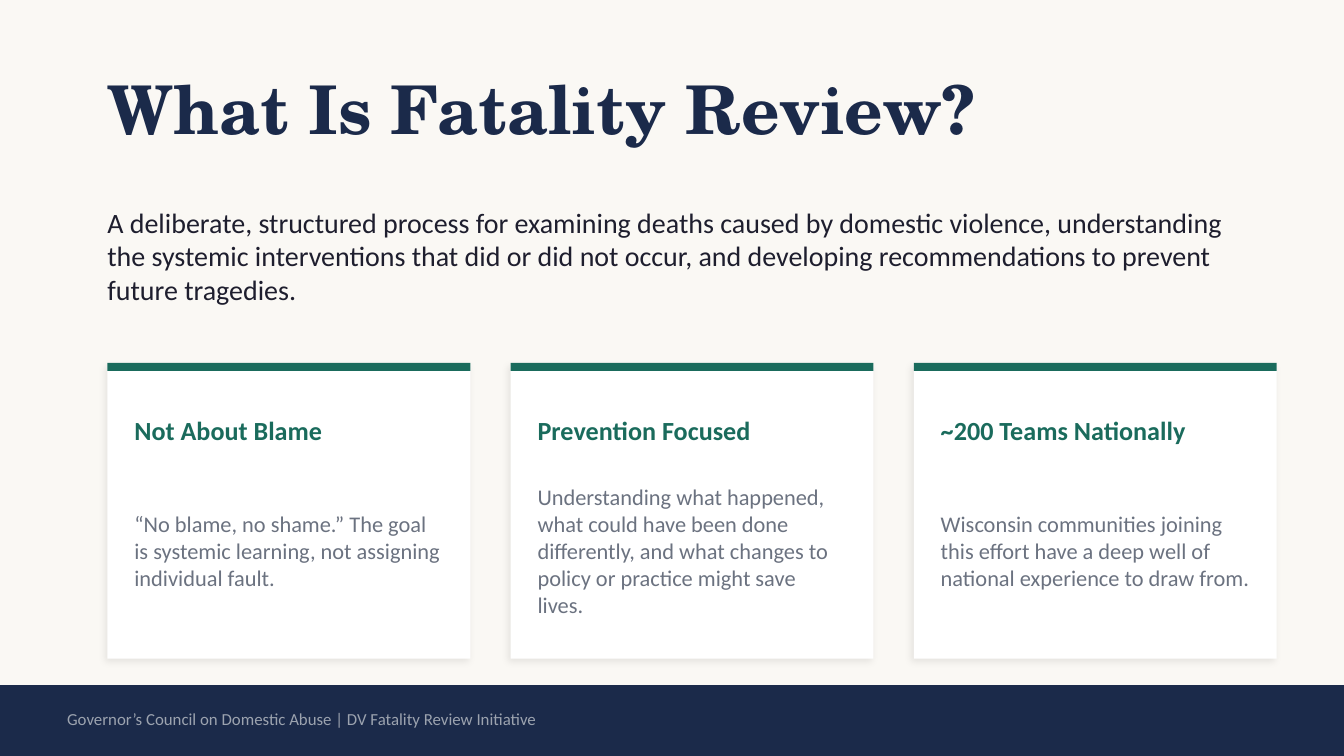
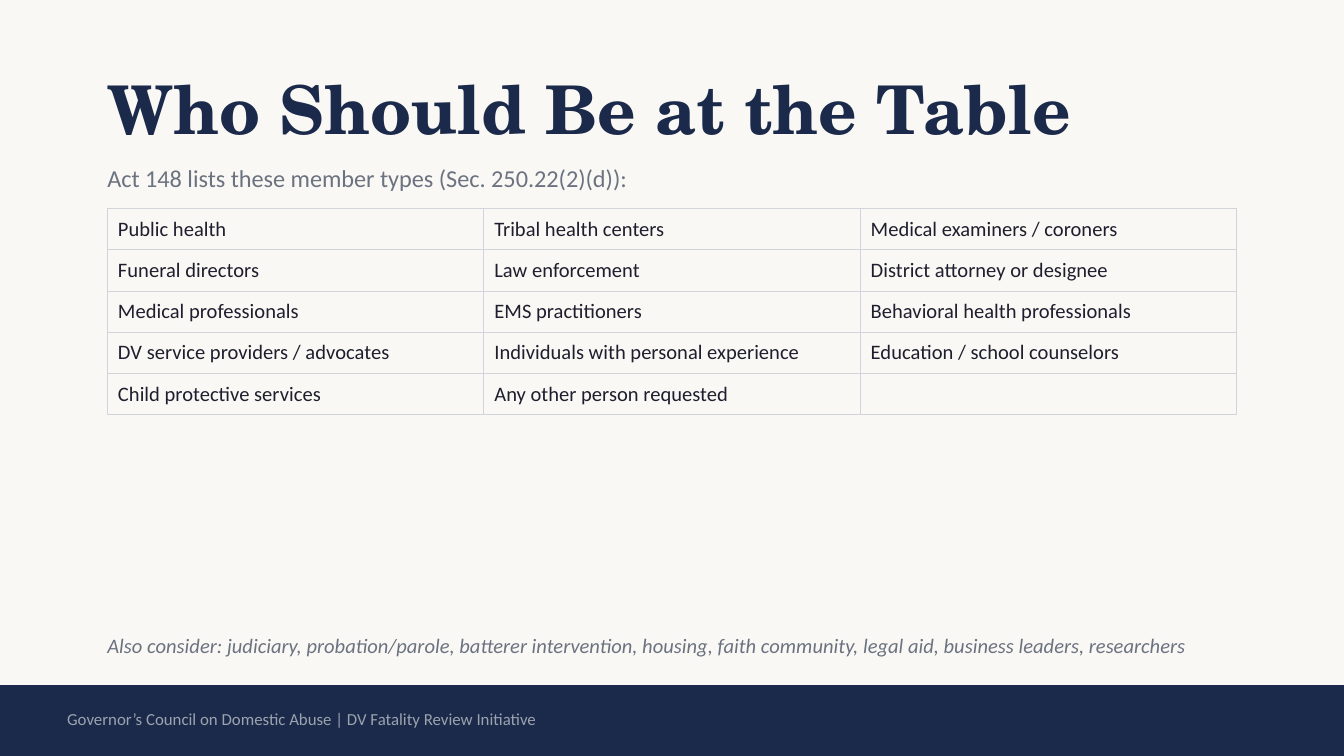
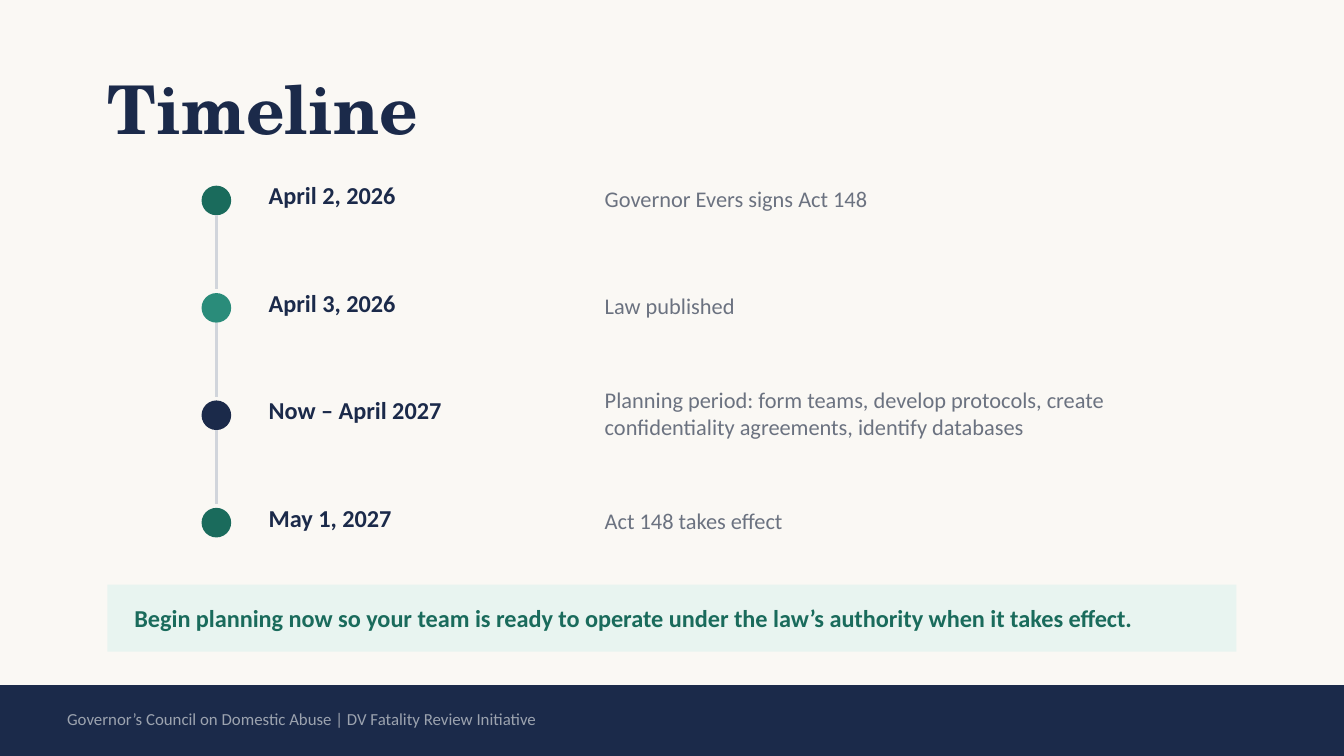
"""Build three slides that introduce domestic violence fatality review."""
from lxml.etree import SubElement
from pptx import Presentation
from pptx.dml.color import RGBColor
from pptx.enum.shapes import MSO_CONNECTOR, MSO_SHAPE
from pptx.enum.text import MSO_ANCHOR, MSO_AUTO_SIZE, PP_ALIGN
from pptx.oxml.ns import qn
from pptx.util import Cm, Pt

NAVY, GREEN, TEAL, MINT = "1B2A4A", "1A6B5C", "2A8C7A", "E8F4F0"
INK, GRAY, SILVER, RULE = "1E1E2E", "6B7280", "9CA3AF", "D1D5DB"
CREAM, WHITE = "FAF8F4", "FFFFFF"
BODY_FONT, TITLE_FONT = "Calibri", "TeX Gyre Schola"
MARGIN, CONTENT_WIDTH = 2.03, 21.34
rgb = RGBColor.from_string


def add_text(slide, text, place, size, color, bold=False, italic=False, face=BODY_FONT, box=None):
    box = box or slide.shapes.add_textbox(0, 0, 0, 0)
    box.left, box.top, box.width, box.height = map(Cm, place)
    frame = box.text_frame
    frame.text = text
    frame.word_wrap = True
    frame.auto_size = MSO_AUTO_SIZE.NONE
    frame.vertical_anchor = MSO_ANCHOR.MIDDLE
    frame.margin_left = frame.margin_top = frame.margin_right = frame.margin_bottom = 0
    paragraph = frame.paragraphs[0]
    paragraph.alignment = PP_ALIGN.LEFT
    font = paragraph.font
    font.name, font.size, font.bold, font.italic = face, Pt(size), bold, italic
    font.color.rgb = rgb(color)


def add_block(slide, place, color, kind=MSO_SHAPE.RECTANGLE):
    block = slide.shapes.add_shape(kind, *map(Cm, place))
    block.shadow.inherit = False
    block.fill.solid()
    block.fill.fore_color.rgb = rgb(color)
    block.line.fill.background()
    return block


prs = Presentation()
prs.slide_width, prs.slide_height = Cm(25.4), Cm(14.29)
backdrop = prs.slide_master.background.fill
backdrop.solid()
backdrop.fore_color.rgb = rgb(CREAM)

slides = []
for heading in ("What Is Fatality Review?", "Who Should Be at the Table", "Timeline"):
    slide = prs.slides.add_slide(prs.slide_layouts[5])
    add_text(slide, heading, (MARGIN, 1.02, CONTENT_WIDTH, 2.03), 36, NAVY,
             bold=True, face=TITLE_FONT, box=slide.shapes.title)
    add_block(slide, (0, 12.95, 25.4, 1.34), NAVY)
    add_text(slide, "Governor’s Council on Domestic Abuse | DV Fatality Review Initiative",
             (1.27, 13.08, 22.86, 1.02), 9, SILVER)
    slides.append(slide)
review, members, timeline = slides

add_text(review, "A deliberate, structured process for examining deaths caused by domestic violence, "
         "understanding the systemic interventions that did or did not occur, and developing "
         "recommendations to prevent future tragedies.",
         (MARGIN, 3.56, CONTENT_WIDTH, 2.54), 15, INK)
principles = [
    ("Not About Blame",
     "“No blame, no shame.” The goal is systemic learning, not assigning individual fault."),
    ("Prevention Focused",
     "Understanding what happened, what could have been done differently, and what changes to "
     "policy or practice might save lives."),
    ("~200 Teams Nationally",
     "Wisconsin communities joining this effort have a deep well of national experience to draw from."),
]
for i, (principle, detail) in enumerate(principles):
    left = MARGIN + i * 7.62
    card = add_block(review, (left, 6.86, 6.86, 5.59), WHITE)
    shadow = SubElement(card._element.spPr.find(qn("a:effectLst")), qn("a:outerShdw"),
                        blurRad=str(Pt(4)), dist=str(Pt(2)), dir="8100000",
                        algn="bl", rotWithShape="0")
    shade = SubElement(shadow, qn("a:srgbClr"), val="000000")
    SubElement(shade, qn("a:alpha"), val="8000")
    add_block(review, (left, 6.86, 6.86, 0.15), GREEN)
    add_text(review, principle, (left + 0.51, 7.49, 5.84, 1.27), 14, GREEN, bold=True)
    add_text(review, detail, (left + 0.51, 8.76, 5.84, 3.3), 12, GRAY)

add_text(members, "Act 148 lists these member types (Sec. 250.22(2)(d)):",
         (MARGIN, 2.92, CONTENT_WIDTH, 0.89), 13, GRAY)
member_types = [
    ("Public health", "Tribal health centers", "Medical examiners / coroners"),
    ("Funeral directors", "Law enforcement", "District attorney or designee"),
    ("Medical professionals", "EMS practitioners", "Behavioral health professionals"),
    ("DV service providers / advocates", "Individuals with personal experience",
     "Education / school counselors"),
    ("Child protective services", "Any other person requested", ""),
]
roster = members.shapes.add_table(5, 3, Cm(MARGIN), Cm(3.94), Cm(CONTENT_WIDTH), Cm(3.8)).table
roster.first_row = roster.horz_banding = False
for row, names in enumerate(member_types):
    for column, member in enumerate(names):
        cell = roster.cell(row, column)
        cell.text = member
        cell.margin_left = cell.margin_right = Cm(0.2)
        cell.margin_top = cell.margin_bottom = Cm(0.15)
        paragraph = cell.text_frame.paragraphs[0]
        font = paragraph.font
        font.name, font.size = BODY_FONT, Pt(11)
        font.color.rgb = rgb(INK)
        if not member:
            SubElement(paragraph._p, qn("a:endParaRPr"), sz="1100")
        borders = cell._tc.get_or_add_tcPr()
        for side in ("a:lnL", "a:lnR", "a:lnT", "a:lnB"):
            border = SubElement(borders, qn(side), w=str(Pt(0.5)))
            SubElement(SubElement(border, qn("a:solidFill")), qn("a:srgbClr"), val=RULE)
        cell.fill.background()
add_text(members, "Also consider: judiciary, probation/parole, batterer intervention, housing, "
         "faith community, legal aid, business leaders, researchers",
         (MARGIN, 11.68, CONTENT_WIDTH, 1.02), 11, GRAY, italic=True)

milestones = [
    ("April 2, 2026", "Governor Evers signs Act 148", GREEN),
    ("April 3, 2026", "Law published", TEAL),
    ("Now – April 2027", "Planning period: form teams, develop protocols, create "
     "confidentiality agreements, identify databases", NAVY),
    ("May 1, 2027", "Act 148 takes effect", GREEN),
]
for i, (date, event, color) in enumerate(milestones):
    top = 3.18 + i * 2.03
    add_block(timeline, (3.81, top + 0.33, 0.56, 0.56), color, MSO_SHAPE.OVAL)
    if i < len(milestones) - 1:
        link = timeline.shapes.add_connector(
            MSO_CONNECTOR.STRAIGHT, Cm(4.09), Cm(top + 0.89), Cm(4.09), Cm(top + 2.29))
        link.line.color.rgb = rgb(RULE)
        link.line.width = Pt(2)
        SubElement(link._element.spPr, qn("a:effectLst"))
    add_text(timeline, date, (5.08, top, 6.35, 1.02), 13, NAVY, bold=True)
    add_text(timeline, event, (11.43, top, 11.43, 1.14), 12, GRAY)
add_block(timeline, (MARGIN, 11.05, CONTENT_WIDTH, 1.27), MINT)
add_text(timeline, "Begin planning now so your team is ready to operate under the law’s authority "
         "when it takes effect.", (2.54, 11.05, 20.32, 1.27), 13, GREEN, bold=True)

prs.save("out.pptx")
